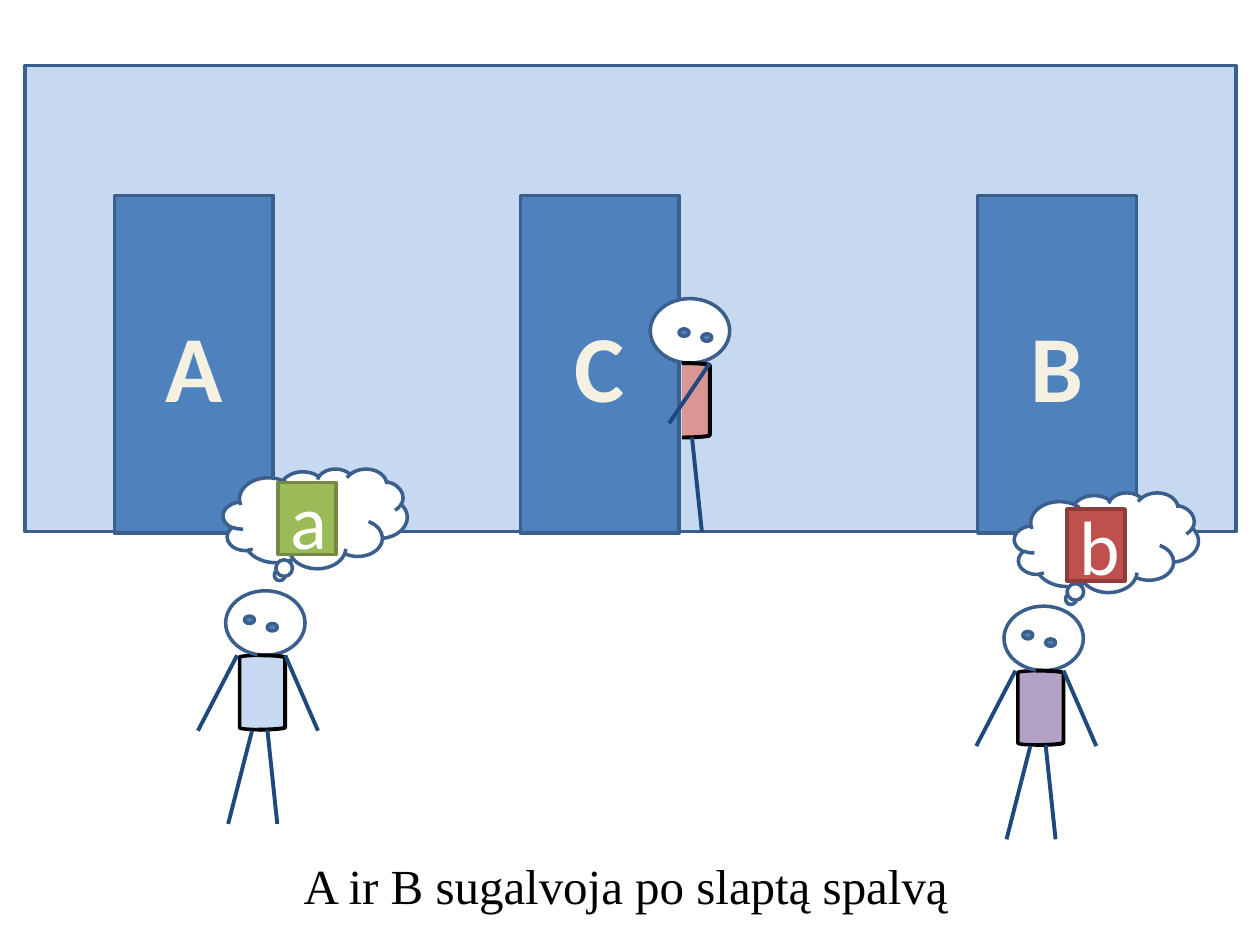
from lxml import etree
from pptx import Presentation
from pptx.dml.color import RGBColor
from pptx.enum import shapes, text
from pptx.oxml.ns import qn
from pptx.util import Cm, Pt

SKY = RGBColor(0xC6, 0xD9, 0xF1)
BLUE = RGBColor(0x4F, 0x81, 0xBD)
EDGE = RGBColor(0x3A, 0x5F, 0x8C)
NAVY = RGBColor(0x1F, 0x49, 0x7D)
CREAM = RGBColor(0xF4, 0xF1, 0xE3)
WHITE = RGBColor(0xFF, 0xFF, 0xFF)
BLACK = RGBColor(0, 0, 0)
PURPLE = RGBColor(0xB3, 0xA2, 0xC7)
PINK = RGBColor(0xD9, 0x96, 0x94)
GREEN = RGBColor(0x9B, 0xBB, 0x59)
OLIVE = RGBColor(0x73, 0x8A, 0x42)
RED = RGBColor(0xC0, 0x50, 0x4D)
MAROON = RGBColor(0x8E, 0x3B, 0x39)

FORM = shapes.MSO_SHAPE

# All lengths are in centimetres.
CAPTION = "A ir B sugalvoja po slaptą spalvą"
WALL = (0.51, 1.32, 24.41, 9.4)
DOORS = [("A", 2.31), ("B", 19.71), ("C", 10.49)]
DOOR_TOP, DOOR_WIDE, DOOR_HIGH = 3.94, 3.2, 6.81

# Body parts are measured from the top left of the head.
LEG = (0.84, 2.8, 1.04, 4.7)
FRONT = {
    "eyes": [(0.38, 0.51), (0.84, 0.66)],
    "limbs": [LEG, (1.2, 1.3, 1.86, 2.82), (0.53, 2.82, 0.05, 4.7),
              (0.23, 1.3, -0.56, 2.82)],
    "whole": True,
}
HIDING = {
    "eyes": [(0.58, 0.61), (1.04, 0.71)],
    "limbs": [LEG, (1.2, 1.3, 0.38, 2.51)],
    "whole": False,
}
PEOPLE = [
    (20.24, 12.22, PURPLE, FRONT),
    (13.11, 6.02, PINK, HIDING),
    (4.55, 11.91, SKY, FRONT),
]
# letter, cloud corner, card corner, card fill, card edge
THOUGHTS = [
    ("b", (20.45, 9.93), (21.51, 10.26), RED, MAROON),
    ("a", (4.5, 9.45), (5.61, 9.73), GREEN, OLIVE),
]


def draw(home, form, box, fill, edge=EDGE, width=2):
    shape = home.add_shape(form, *map(Cm, box))
    shape.shadow.inherit = False
    shape.fill.solid()
    shape.fill.fore_color.rgb = fill
    shape.line.color.rgb = edge
    shape.line.width = Pt(width)
    return shape


def limb(home, ends):
    line = home.add_connector(shapes.MSO_CONNECTOR.STRAIGHT, *map(Cm, ends))
    line.line.color.rgb = NAVY
    line.line.width = Pt(2.25)
    etree.SubElement(line._element.spPr, qn("a:effectLst"))


def write(shape, words, size, color, font="Calibri", bold=False):
    frame = shape.text_frame
    frame.text = words
    frame.word_wrap = True
    para = frame.paragraphs[0]
    para.alignment = text.PP_ALIGN.CENTER
    face = para.runs[0].font
    face.name, face.size, face.bold = font, Pt(size), bold
    face.color.rgb = color


def person(home, x, y, shirt, pose):
    if pose["whole"]:
        draw(home, FORM.LEFT_BRACKET, (x + 0.28, y + 1.3, 0.46, 1.5),
             shirt, BLACK)
    draw(home, FORM.OVAL, (x, y, 1.6, 1.3), WHITE)
    for dx, dy in pose["eyes"]:
        draw(home, FORM.OVAL, (x + dx, y + dy, 0.2, 0.15), BLUE)
    draw(home, FORM.RIGHT_BRACKET, (x + 0.64, y + 1.3, 0.56, 1.5),
         shirt, BLACK, 2.25)
    for x1, y1, x2, y2 in pose["limbs"]:
        limb(home, (x + x1, y + y1, x + x2, y + y2))


def thought(home, letter, cloud, card, fill, edge):
    bubble = draw(home, FORM.CLOUD_CALLOUT, (*cloud, 3.71, 2.01), WHITE)
    bubble.adjustments[0] = -0.2
    bubble.adjustments[1] = 0.59
    square = draw(home, FORM.RECTANGLE, (*card, 1.17, 1.45), fill, edge)
    write(square, letter, 44, WHITE)


def main():
    deck = Presentation()
    deck.slide_width, deck.slide_height = Cm(25.4), Cm(19.05)
    scene = deck.slides.add_slide(deck.slide_layouts[6]).shapes

    draw(scene, FORM.RECTANGLE, WALL, SKY)
    for name, left in DOORS:
        door = draw(scene, FORM.RECTANGLE,
                    (left, DOOR_TOP, DOOR_WIDE, DOOR_HIGH), BLUE)
        write(door, name, 54, CREAM, bold=True)
    for figure in PEOPLE:
        person(scene.add_group_shape().shapes, *figure)
    label = scene.add_textbox(Cm(0.51), Cm(17.12), Cm(24.21), Cm(1.45))
    write(label, CAPTION, 28, BLACK, "Times New Roman")
    for idea in THOUGHTS:
        thought(scene.add_group_shape().shapes, *idea)

    deck.save("out.pptx")


if __name__ == "__main__":
    main()
